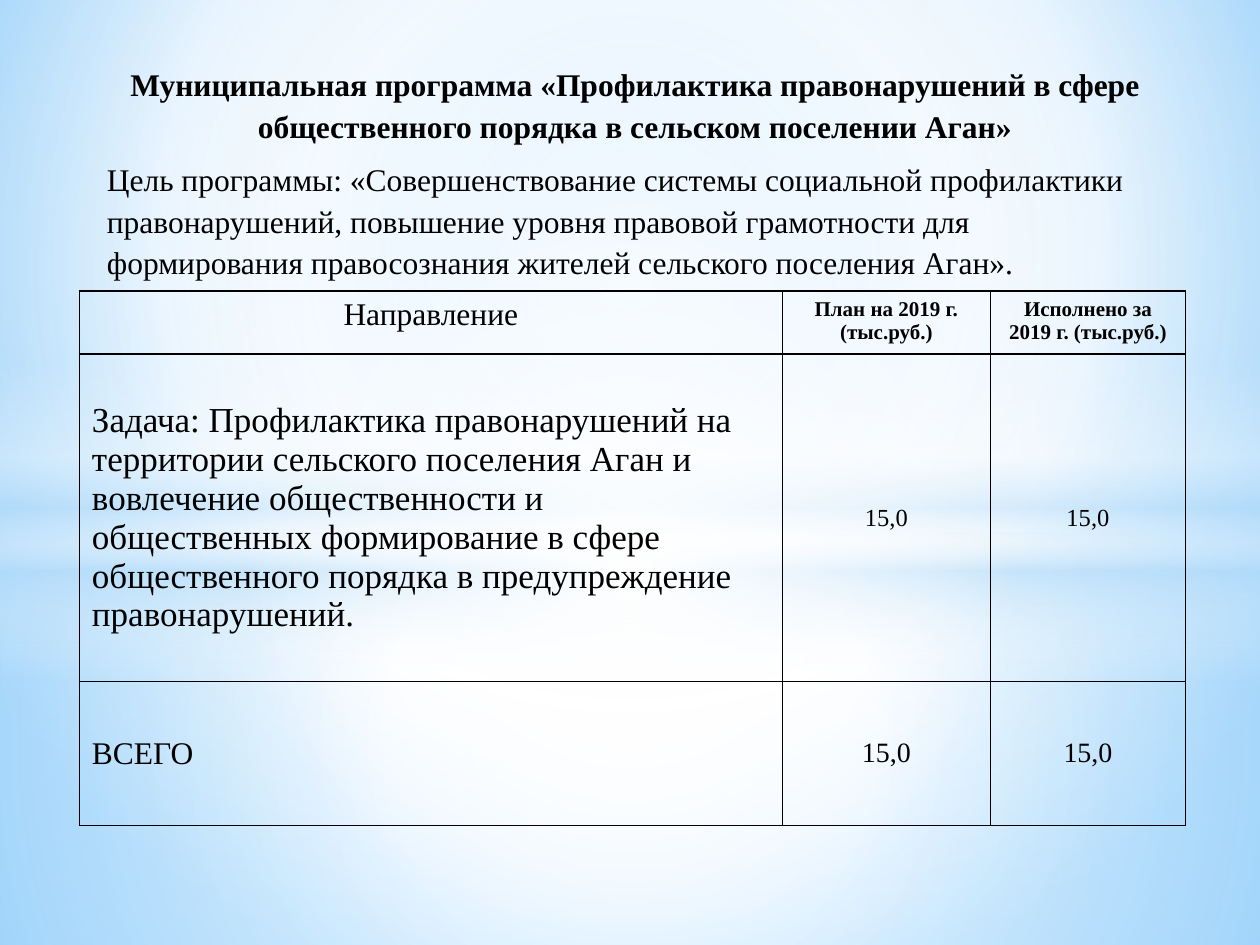
"""Build the slide on the 2019 crime prevention programme of Agan settlement."""
from lxml.etree import SubElement
from pptx import Presentation
from pptx.dml.color import RGBColor
from pptx.enum.shapes import MSO_SHAPE
from pptx.enum.text import MSO_ANCHOR, PP_ALIGN
from pptx.oxml.ns import qn
from pptx.util import Inches, Pt

BLACK = RGBColor(0x00, 0x00, 0x00)
WHITE = RGBColor(0xFF, 0xFF, 0xFF)
PALE = RGBColor(0xB4, 0xDC, 0xFA)
SKY = RGBColor(0x9E, 0xD5, 0xFF)
AZURE = RGBColor(0x5B, 0xB9, 0xFF)
FONT = "Times New Roman"

TITLE = ("Муниципальная программа «Профилактика правонарушений в сфере "
         "общественного порядка в сельском поселении Аган»")
GOAL = ("Цель программы: «Совершенствование системы социальной профилактики "
        "правонарушений, повышение уровня правовой грамотности для "
        "формирования правосознания жителей сельского поселения Аган».")
TASK = ("Задача: Профилактика правонарушений на территории сельского поселения "
        "Аган и вовлечение общественности и общественных формирование в сфере "
        "общественного порядка в предупреждение правонарушений.")

BUDGET = [
    [("Направление", 18), ("План на 2019 г. (тыс.руб.)", 12),
     ("Исполнено за\n2019 г. (тыс.руб.)", 12)],
    [(TASK, 20), ("15,0", 14), ("15,0", 14)],
    [("ВСЕГО", 18), ("15,0", 16), ("15,0", 16)],
]
COLUMN_WIDTHS = [5.58, 1.65, 1.55]
ROW_HEIGHTS = [0.47, 2.6, 1.14]

CENTRE = (50, 50, 50, 50)
BACKDROP = [(0, SKY, 100), (60, WHITE, 100), (100, AZURE, 100)]
GLOWS = [
    (MSO_SHAPE.RECTANGLE, (0, 4.23, 10, 3.27), CENTRE,
     [(0, WHITE, 91), (37, WHITE, 76), (100, PALE, 79)]),
    (MSO_SHAPE.RECTANGLE, (0, 0, 10, 4.23), CENTRE,
     [(0, WHITE, 89), (48, WHITE, 62), (100, PALE, 79)]),
    (MSO_SHAPE.RECTANGLE, (0, 2.9, 10, 2.5), None,
     [(0, WHITE, 0), (29, WHITE, 30), (45, PALE, 40),
      (55, WHITE, 26), (65, PALE, 60), (100, WHITE, 0)]),
    (MSO_SHAPE.OVAL, (0, 1.75, 10, 5.58), CENTRE,
     [(0, WHITE, 100), (54, WHITE, 0)]),
]


def percent(value):
    return str(value * 1000)


def add_color(parent, color, alpha=100):
    rgb = SubElement(parent, qn("a:srgbClr"), val=str(color))
    if alpha < 100:
        SubElement(rgb, qn("a:alpha"), val=percent(alpha))


def fill_gradient(fill, owner, stops, focus):
    fill.solid()
    solid = next(owner.iter(qn("a:solidFill")))
    gradient = SubElement(solid.getparent(), qn("a:gradFill"), rotWithShape="1")
    solid.getparent().replace(solid, gradient)
    stop_list = SubElement(gradient, qn("a:gsLst"))
    for position, color, alpha in stops:
        add_color(SubElement(stop_list, qn("a:gs"), pos=percent(position)), color, alpha)
    if focus:
        circle = SubElement(gradient, qn("a:path"), {"path": "circle"})
        sides = {side: percent(value) for side, value in zip("ltrb", focus)}
        SubElement(circle, qn("a:fillToRect"), sides)
    else:
        SubElement(gradient, qn("a:lin"), ang="5400000", scaled="0")


def write(paragraph, text, size=18, bold=False, align=PP_ALIGN.LEFT, **spacing):
    paragraph.alignment = align
    for name, value in spacing.items():
        setattr(paragraph, name, value)
    run = paragraph.add_run()
    run.text = text
    run.font.name = FONT
    run.font.size = Pt(size)
    run.font.bold = bold
    run.font.color.rgb = BLACK


def outline(cell):
    properties = cell._tc.get_or_add_tcPr()
    for side in "LRTB":
        border = SubElement(properties, qn(f"a:ln{side}"), w=str(Pt(1)))
        add_color(SubElement(border, qn("a:solidFill")), BLACK)
    cell.fill.background()


def add_budget(slide):
    frame = slide.shapes.add_table(
        len(BUDGET), len(COLUMN_WIDTHS), Inches(0.63), Inches(2.31),
        Inches(sum(COLUMN_WIDTHS)), Inches(sum(ROW_HEIGHTS)))
    table = frame.table
    table.first_row = table.horz_banding = False
    for column, width in zip(table.columns, COLUMN_WIDTHS):
        column.width = Inches(width)
    for r, (height, entries) in enumerate(zip(ROW_HEIGHTS, BUDGET)):
        table.rows[r].height = Inches(height)
        for c, (text, size) in enumerate(entries):
            cell = table.cell(r, c)
            outline(cell)
            cell.vertical_anchor = MSO_ANCHOR.MIDDLE if r else MSO_ANCHOR.TOP
            align = PP_ALIGN.LEFT if r and not c else PP_ALIGN.CENTER
            for i, line in enumerate(text.split("\n")):
                body = cell.text_frame
                paragraph = body.add_paragraph() if i else body.paragraphs[0]
                write(paragraph, line, size=size, bold=r == 0 and c > 0, align=align)


def main():
    deck = Presentation()
    deck.slide_width, deck.slide_height = Inches(10), Inches(7.5)
    slide = deck.slides.add_slide(deck.slide_layouts[6])
    fill_gradient(slide.background.fill, slide._element, BACKDROP, (20, 10, 20, 60))
    for preset, box, focus, stops in GLOWS:
        glow = slide.shapes.add_shape(preset, *map(Inches, box))
        glow.shadow.inherit = False
        glow.line.fill.background()
        fill_gradient(glow.fill, glow._element, stops, focus)

    intro = slide.shapes.add_textbox(*map(Inches, (0.75, 0.44, 8.58, 6.69))).text_frame
    intro.word_wrap = True
    write(intro.paragraphs[0], TITLE, bold=True, align=PP_ALIGN.CENTER,
          line_spacing=1.1, space_after=Pt(3))
    write(intro.add_paragraph(), GOAL,
          line_spacing=1.1, space_before=Pt(3.6), space_after=Pt(3))
    add_budget(slide)
    deck.save("out.pptx")


if __name__ == "__main__":
    main()
